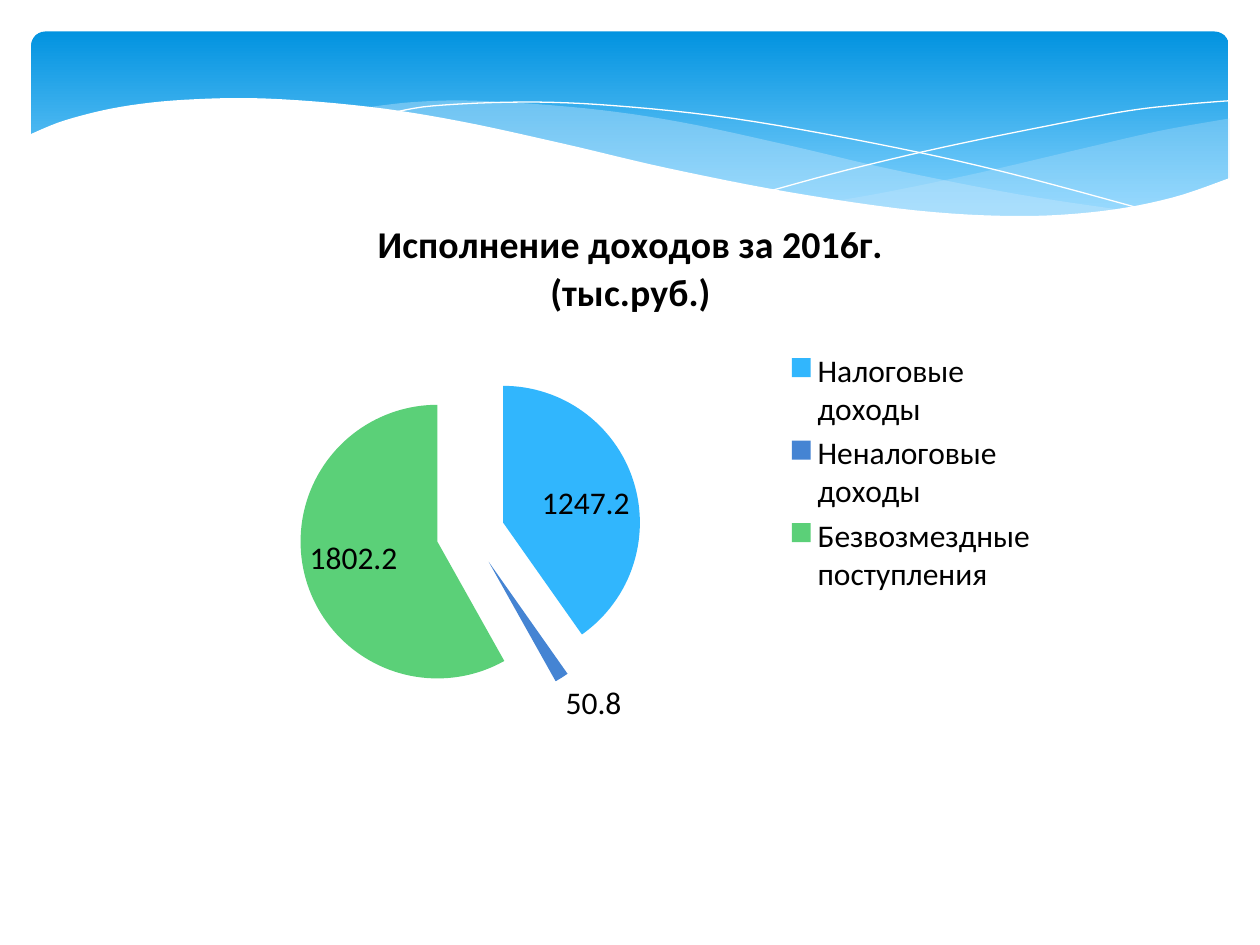
from lxml.etree import SubElement
from pptx import Presentation
from pptx.chart.data import CategoryChartData
from pptx.dml.color import RGBColor
from pptx.enum.chart import XL_CHART_TYPE as Kind
from pptx.enum.chart import XL_LABEL_POSITION as Spot
from pptx.enum.chart import XL_LEGEND_POSITION as Side
from pptx.enum.shapes import MSO_SHAPE as Form
from pptx.oxml import parse_xml
from pptx.oxml.ns import nsdecls, qn
from pptx.util import Inches, Pt

# Grid of 40 columns by 30 rows; boxes are left, top, width, height in cells
CELL = Inches(0.25)
BANNER = (1, 1, 38, 6.25)
CHART = (6.68, 6.12, 26.68, 17.76)

# Knots of the banner's curves, in cells from the banner's corner
RIGHT = [
    [(38.04, 2.76), (35.84, 3.15), (33.44, 3.7), (30.16, 4.47),
     (27.24, 5.08), (25.44, 5.4)],
    [(25.44, 5.4), (27.76, 5.68), (30.24, 5.88), (32.4, 5.88),
     (34.24, 5.7), (36.12, 5.32), (38.04, 4.64)],
]
MIDDLE = [
    [(34.72, 5.68), (31.28, 5.16), (27.24, 4.36), (24.16, 3.64),
     (20.64, 2.88), (17.6, 2.44), (14.2, 2.2), (12.12, 2.24), (10.44, 2.44)],
    [(10.44, 2.44), (13.48, 2.88), (16.96, 3.64), (21.64, 4.72),
     (25, 5.32), (28.44, 5.76), (31.72, 5.92), (34.72, 5.68)],
]
FALL = [[(11.36, 2.6), (12.76, 2.36), (15.64, 2.24), (18.56, 2.36),
         (22.28, 2.76), (26.8, 3.56), (30.8, 4.44), (35.28, 5.64)]]
RISE = [[(23.52, 5.04), (25.88, 4.4), (28.92, 3.68), (32.44, 2.96),
         (34.8, 2.52), (36.52, 2.32), (38, 2.2)]]
FRONT = [
    [(38.07, 4.64), (36.2, 5.28), (34, 5.7), (31.35, 5.86), (28.05, 5.68),
     (24.05, 5.1), (20.15, 4.33), (16.87, 3.56), (13.6, 2.85), (10.7, 2.39),
     (7.45, 2.13), (4.85, 2.17), (2.8, 2.4), (1.07, 2.82), (-0.07, 3.28)],
    [(-0.07, 7.95), (38.07, 7.95)],
]

TITLE = "Исполнение доходов за 2016г. (тыс.руб.)"
INCOME = [
    ("Налоговые доходы", 1247.2, "31B6FD"),
    ("Неналоговые доходы", 50.8, "4584D3"),
    ("Безвозмездные поступления", 1802.2, "5BD078"),
]


def tint(color, code):
    color.rgb = RGBColor.from_string(code)


def paint(fill, code):
    fill.solid()
    tint(fill.fore_color, code)


def place(box):
    return [round(n * CELL) for n in box]


def smooth(knots, steps=6):
    """Return points of a Catmull-Rom curve through the knots."""
    if len(knots) < 3:
        return knots
    ends = [knots[0], *knots, knots[-1]]
    dots = [knots[0]]
    for a, b, c, d in zip(ends, ends[1:], ends[2:], ends[3:]):
        for i in range(1, steps + 1):
            t = i / steps
            dots.append(tuple(
                q + t / 2 * (r - p + t * (2 * p - 5 * q + 4 * r - s
                                          + t * (3 * q - p - 3 * r + s)))
                for p, q, r, s in zip(a, b, c, d)))
    return dots


def draw(shapes, box, arcs, close):
    left, top = box[:2]
    dots = [((left + x) * CELL, (top + y) * CELL)
            for arc in arcs for x, y in smooth(arc)]
    pen = shapes.build_freeform(*dots[0])
    pen.add_line_segments(dots[1:], close=close)
    shape = pen.convert_to_shape()
    shape.shadow.inherit = False
    return shape


def wave(shapes, box, arcs, code, alpha=100):
    shape = draw(shapes, box, arcs, True)
    paint(shape.fill, code)
    shape.line.fill.background()
    if alpha < 100:
        color = shape.fill._xPr.find(qn("a:solidFill"))[0]
        SubElement(color, qn("a:alpha"), val=str(alpha * 1000))


def thread(shapes, box, arcs):
    shape = draw(shapes, box, arcs, False)
    shape.fill.background()
    shape.line.width = 0
    paint(shape.line.fill, "FFFFFF")


def add_banner(slide, box):
    back = slide.shapes.add_shape(Form.ROUNDED_RECTANGLE, *place(box))
    back.adjustments[0] = 0.07
    back.shadow.inherit = False
    back.line.fill.background()
    back.fill.gradient()
    back.fill.gradient_angle = 270
    ramp = [(0, "0293E0"), (0.9, "83D3FE")]
    for stop, (at, code) in zip(back.fill.gradient_stops, ramp):
        stop.position = at
        tint(stop.color, code)

    shapes = slide.shapes.add_group_shape().shapes
    wave(shapes, box, RIGHT, "C6E7FC", 29)
    wave(shapes, box, MIDDLE, "C6E7FC", 40)
    thread(shapes, box, FALL)
    thread(shapes, box, RISE)
    wave(shapes, box, FRONT, "FFFFFF")


def style(font, size, bold=False):
    font.name = "Calibri"
    font.size = Pt(size)
    font.bold = bold
    tint(font.color, "000000")


def add_pie(slide, box):
    names, sums, codes = zip(*INCOME)
    data = CategoryChartData()
    data.categories = names
    data.add_series("Series 1", sums)
    chart = slide.shapes.add_chart(Kind.PIE, *place(box), data).chart
    style(chart.font, 18)

    run = chart.chart_title.text_frame.paragraphs[0].add_run()
    run.text = TITLE
    style(run.font, 21.6, True)

    chart.has_legend = True
    chart.legend.position = Side.RIGHT
    chart.legend.include_in_layout = False
    style(chart.legend.font, 18)

    plot = chart.plots[0]
    plot.vary_by_categories = True
    plot.has_data_labels = True
    labels = plot.data_labels
    labels.show_value = True
    labels.show_percentage = False
    labels.position = Spot.BEST_FIT
    style(labels.font, 18)

    row = plot.series[0]
    for i, code in enumerate(codes):
        paint(row.points[i].format.fill, code)
    gap = parse_xml(f'<c:explosion {nsdecls("c")} val="25"/>')
    row._element.find(qn("c:dPt")).addprevious(gap)


def main():
    deck = Presentation()
    deck.slide_width, deck.slide_height = 40 * CELL, 30 * CELL
    slide = deck.slides.add_slide(deck.slide_layouts[6])
    paint(slide.background.fill, "FFFFFF")
    add_banner(slide, BANNER)
    add_pie(slide, CHART)
    deck.save("out.pptx")


if __name__ == "__main__":
    main()
